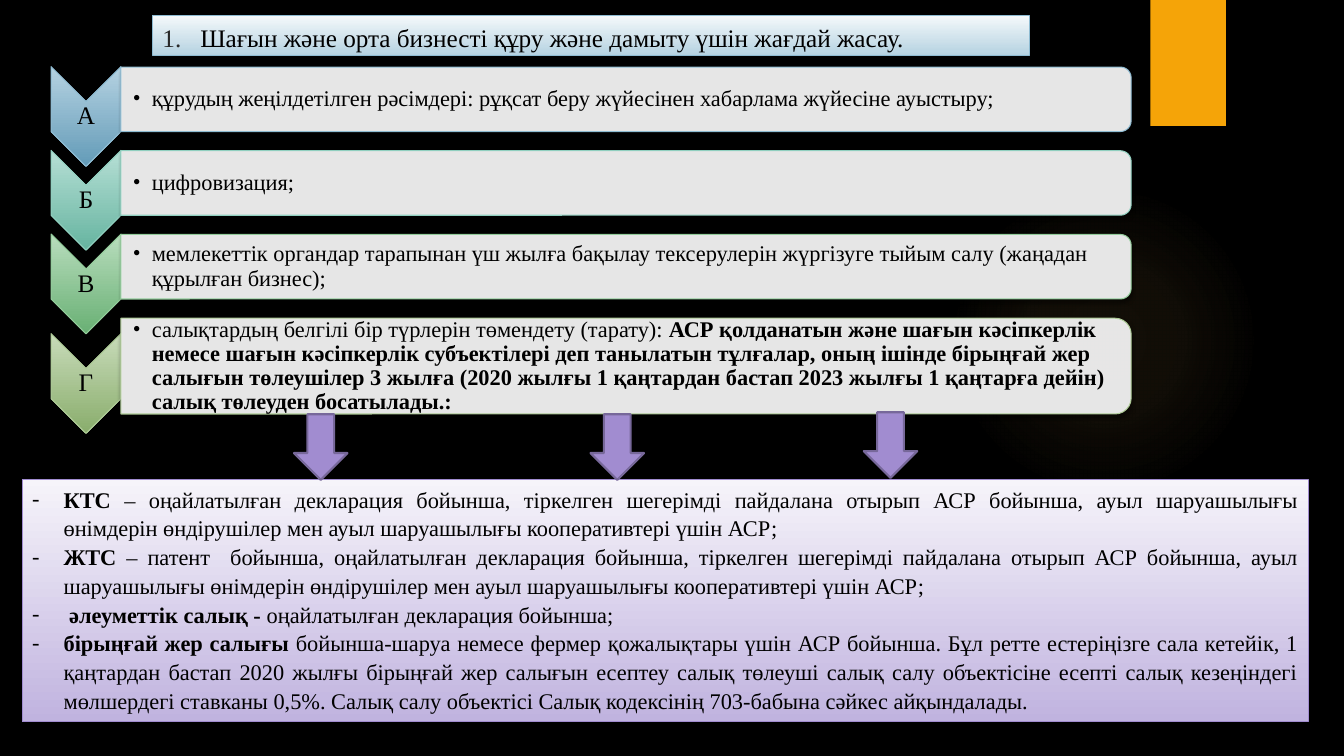
from lxml.etree import SubElement
from pptx import Presentation
from pptx.dml.color import RGBColor
from pptx.enum.shapes import MSO_SHAPE as Preset
from pptx.enum.text import MSO_ANCHOR as Anchor, PP_ALIGN as Align
from pptx.oxml.ns import qn
from pptx.util import Pt

BLACK = RGBColor(0x00, 0x00, 0x00)
WHITE = RGBColor(0xFF, 0xFF, 0xFF)
NUMBER_GREY = RGBColor(0x28, 0x28, 0x28)
ORANGE = RGBColor(0xF5, 0xA4, 0x08)
GLOW = RGBColor(0xFA, 0xC9, 0x6A)
BLUE_LIGHT = RGBColor(0xB5, 0xD2, 0xE1)
BLUE_PALE = RGBColor(0xF5, 0xF9, 0xFB)
BLUE_DARK = RGBColor(0x63, 0x9B, 0xB8)
BLUE_LINE = RGBColor(0x8E, 0xBB, 0xD2)
TEAL_LIGHT = RGBColor(0xB6, 0xDF, 0xD5)
TEAL_DARK = RGBColor(0x66, 0xB4, 0xA0)
TEAL_LINE = RGBColor(0x90, 0xCF, 0xBF)
GREEN_LIGHT = RGBColor(0xB8, 0xDD, 0xBD)
GREEN_DARK = RGBColor(0x69, 0xB0, 0x74)
GREEN_LINE = RGBColor(0x93, 0xCC, 0x9B)
OLIVE_LIGHT = RGBColor(0xC8, 0xDB, 0xB9)
OLIVE_DARK = RGBColor(0x89, 0xAD, 0x6C)
OLIVE_LINE = RGBColor(0xAC, 0xC9, 0x95)
PURPLE_PALE = RGBColor(0xF6, 0xF4, 0xFA)
PURPLE_LIGHT = RGBColor(0xC0, 0xB3, 0xDF)
PURPLE = RGBColor(0xA1, 0x8C, 0xD0)
PURPLE_DARK = RGBColor(0x77, 0x68, 0x9A)

FONT = "Times New Roman"
TITLE = "Шағын және орта бизнесті құру және дамыту үшін жағдай жасау."

STEPS = [
    ("А", 47.6, 47.9, 46.1, (BLUE_LIGHT, BLUE_DARK, BLUE_LINE), [
        ("құрудың жеңілдетілген рәсімдері: рұқсат беру жүйесінен хабарлама жүйесіне ауыстыру;", False)]),
    ("Б", 107.4, 107.7, 46.1, (TEAL_LIGHT, TEAL_DARK, TEAL_LINE), [("цифровизация;", False)]),
    ("В", 167.2, 167.5, 46.1, (GREEN_LIGHT, GREEN_DARK, GREEN_LINE), [
        ("мемлекеттік органдар тарапынан үш жылға бақылау тексерулерін жүргізуге тыйым салу "
         "(жаңадан құрылған бизнес);", False)]),
    ("Г", 238.3, 227.3, 68.4, (OLIVE_LIGHT, OLIVE_DARK, OLIVE_LINE), [
        ("салықтардың белгілі бір түрлерін төмендету (тарату): ", False),
        ("АСР қолданатын және шағын кәсіпкерлік немесе шағын кәсіпкерлік субъектілері деп "
         "танылатын тұлғалар, оның ішінде бірыңғай жер салығын төлеушілер 3 жылға (2020 жылғы "
         "1 қаңтардан бастап 2023 жылғы 1 қаңтарға дейін) салық төлеуден босатылады.:", True)]),
]

TAXES = [
    [("КТС", True),
     (" – оңайлатылған декларация бойынша, тіркелген шегерімді пайдалана отырып АСР бойынша, "
      "ауыл шаруашылығы өнімдерін өндірушілер мен ауыл шаруашылығы кооперативтері үшін АСР;", False)],
    [("ЖТС", True),
     (" – патент  бойынша, оңайлатылған декларация бойынша, тіркелген шегерімді пайдалана отырып "
      "АСР бойынша, ауыл шаруашылығы өнімдерін өндірушілер мен ауыл шаруашылығы кооперативтері "
      "үшін АСР;", False)],
    [(" әлеуметтік салық - ", True), ("оңайлатылған декларация бойынша;", False)],
    [("бірыңғай жер салығы ", True),
     ("бойынша-шаруа немесе фермер қожалықтары үшін АСР бойынша. Бұл ретте естеріңізге сала "
      "кетейік, 1 қаңтардан бастап 2020 жылғы бірыңғай жер салығын есептеу салық төлеуші салық "
      "салу объектісіне есепті салық кезеңіндегі мөлшердегі ставканы 0,5%. Салық салу объектісі "
      "Салық кодексінің 703-бабына сәйкес айқындалады.", False)],
]


def add_child(parent, tag, **attributes):
    return SubElement(parent, qn(tag), {key: str(value) for key, value in attributes.items()})


def add_color(parent, color, alpha=100):
    element = add_child(parent, "a:srgbClr", val=color)
    if alpha < 100:
        add_child(element, "a:alpha", val=alpha * 1000)


def set_gradient(shape, stops, circular=False):
    shape.fill.background()
    properties = shape.element.spPr
    gradient = add_child(properties, "a:gradFill", rotWithShape=0)
    stop_list = add_child(gradient, "a:gsLst")
    for position, color, alpha in stops:
        add_color(add_child(stop_list, "a:gs", pos=position * 1000), color, alpha)
    if circular:
        center = add_child(gradient, "a:path", path="circle")
        add_child(center, "a:fillToRect", l=50000, t=50000, r=50000, b=50000)
    else:
        add_child(gradient, "a:lin", ang=5400000, scaled=0)
    properties.replace(properties.find(qn("a:noFill")), gradient)


def set_vertical_gradient(shape, top_color, bottom_color):
    set_gradient(shape, [(0, top_color, 100), (100, bottom_color, 100)])


def set_shadow(shape, alpha, blur, distance):
    effects = shape.element.spPr.find(qn("a:effectLst"))
    shadow = add_child(effects, "a:outerShdw", blurRad=Pt(blur), dist=Pt(distance),
                       dir=5400000, algn="ctr", rotWithShape=0)
    add_color(shadow, BLACK, alpha)


def add_shape(slide, preset, left, top, width, height, fill=None, line=None, line_width=0.75):
    shape = slide.shapes.add_shape(preset, Pt(left), Pt(top), Pt(width), Pt(height))
    if fill is not None:
        shape.fill.solid()
        shape.fill.fore_color.rgb = fill
    if line is None:
        shape.line.fill.background()
    else:
        shape.line.color.rgb = line
        shape.line.width = Pt(line_width)
    shape.shadow.inherit = False
    return shape


def add_turned_shape(slide, preset, left, top, width, height, **style):
    shift = (width - height) / 2
    shape = add_shape(slide, preset, left + shift, top - shift, height, width, **style)
    shape.rotation = 90
    return shape


def set_bullet(paragraph, indent, character=None, color=BLACK):
    properties = paragraph._p.get_or_add_pPr()
    properties.set("marL", str(Pt(indent)))
    properties.set("indent", str(-Pt(indent)))
    add_color(add_child(properties, "a:buClr"), color)
    add_child(properties, "a:buFont", typeface=FONT)
    if character:
        add_child(properties, "a:buChar", char=character)
    else:
        add_child(properties, "a:buAutoNum", type="arabicPeriod")


def write_paragraph(paragraph, runs, size, alignment, spacing):
    for text, bold in runs:
        run = paragraph.add_run()
        run.text = text
        run.font.bold = bold
    paragraph.alignment = alignment
    paragraph.line_spacing = spacing
    paragraph.font.name = FONT
    paragraph.font.size = Pt(size)
    paragraph.font.color.rgb = BLACK


def add_label(slide, left, top, width, height, left_margin):
    frame = slide.shapes.add_textbox(Pt(left), Pt(top), Pt(width), Pt(height)).text_frame
    frame.word_wrap = True
    frame.vertical_anchor = Anchor.MIDDLE
    frame.margin_left = Pt(left_margin)
    frame.margin_top = frame.margin_right = frame.margin_bottom = Pt(0.9)
    return frame.paragraphs[0]


def add_step(slide, letter, chevron_top, bar_top, bar_height, colors, runs):
    light, dark, line = colors
    chevron = add_turned_shape(slide, Preset.CHEVRON, 36.5, chevron_top, 49.9, 71.3, line=line)
    set_vertical_gradient(chevron, light, dark)
    set_shadow(chevron, 60, 5, 3)
    label = add_label(slide, 36.5, chevron_top + 25, 49.9, 21.4, 0.9)
    write_paragraph(label, [(letter, False)], 18, Align.CENTER, 0.9)

    bar = add_turned_shape(slide, Preset.ROUND_2_SAME_RECTANGLE, 86.4, bar_top, 721.6, bar_height,
                           fill=WHITE, line=line)
    bar_color = bar.element.spPr.find(qn("a:solidFill"))[0]
    add_child(bar_color, "a:alpha", val=90000)
    set_shadow(bar, 45, 3, 2)
    inset = bar_height * 0.05
    text = add_label(slide, 86.4, bar_top + inset, 719, bar_height - 2 * inset, 8.6)
    set_bullet(text, 13.5, "•")
    write_paragraph(text, runs, 16, Align.LEFT, 0.9)


def add_panel(slide, left, top, width, height, colors, line, items, size, indent, **bullet):
    panel = add_shape(slide, Preset.RECTANGLE, left, top, width, height, line=line)
    set_vertical_gradient(panel, *colors)
    frame = panel.text_frame
    frame.word_wrap = True
    frame.vertical_anchor = Anchor.TOP
    for index, runs in enumerate(items):
        paragraph = frame.add_paragraph() if index else frame.paragraphs[0]
        set_bullet(paragraph, indent, **bullet)
        write_paragraph(paragraph, runs, size, Align.JUSTIFY, 1.07)


def main():
    presentation = Presentation()
    presentation.slide_width, presentation.slide_height = Pt(960), Pt(540)
    slide = presentation.slides.add_slide(presentation.slide_layouts[6])
    slide.background.fill.solid()
    slide.background.fill.fore_color.rgb = BLACK

    glow = add_shape(slide, Preset.OVAL, 677.5, 131.8, 221.8, 221.8)
    set_gradient(glow, [(0, GLOW, 7), (36, GLOW, 6), (69, GLOW, 0)], circular=True)
    tab = add_shape(slide, Preset.RECTANGLE, 821.7, 0, 54, 90, fill=ORANGE)
    set_shadow(tab, 45, 3, 2)

    add_panel(slide, 109, 10.8, 626.4, 28.8, (BLUE_PALE, BLUE_LIGHT), BLUE_LINE,
              [[(TITLE, False)]], 18, 27, color=NUMBER_GREY)
    for step in STEPS:
        add_step(slide, *step)
    add_panel(slide, 15.9, 342.2, 918.7, 173.3, (PURPLE_PALE, PURPLE_LIGHT), PURPLE,
              TAXES, 16, 22.5, character="-")
    for left, top in [(617, 294.5), (210, 295.9), (421.8, 295.9)]:
        add_turned_shape(slide, Preset.RIGHT_ARROW, left, top, 38.2, 46.8,
                         fill=PURPLE, line=PURPLE_DARK, line_width=1.5)
    presentation.save("out.pptx")


if __name__ == "__main__":
    main()
